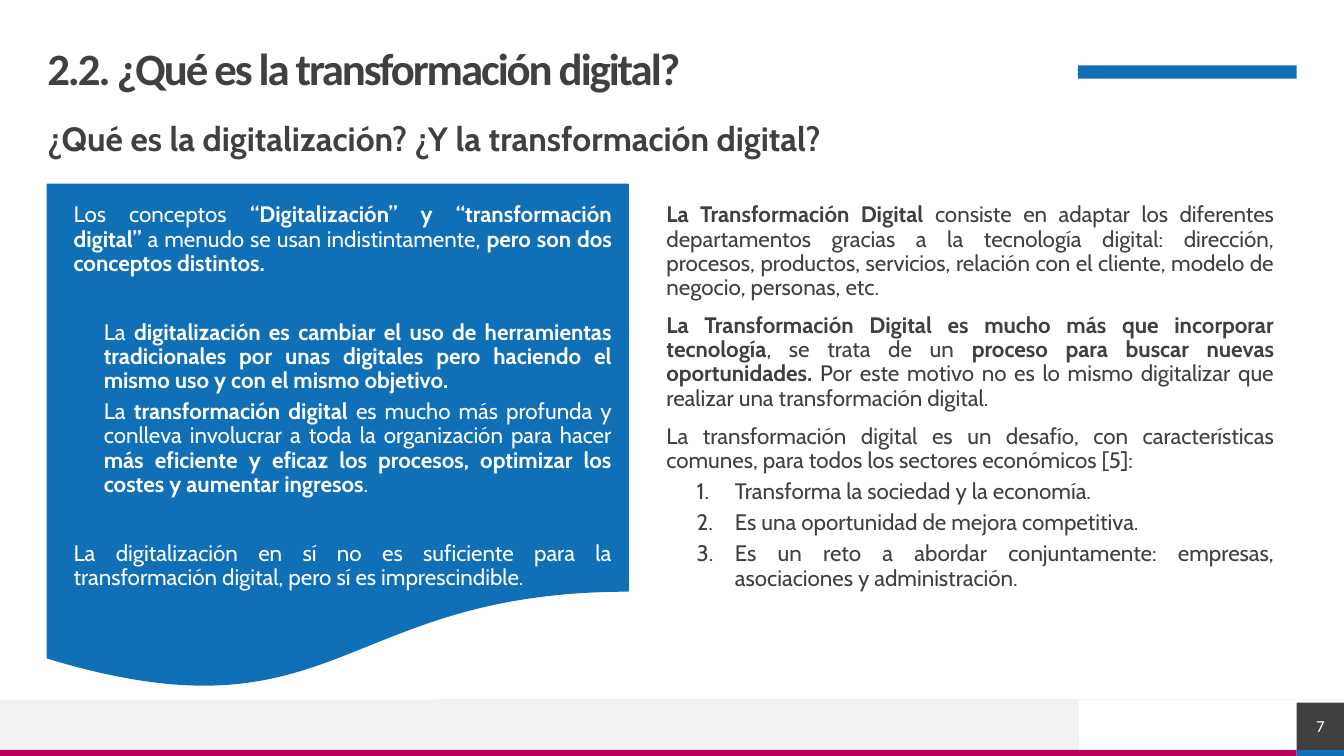
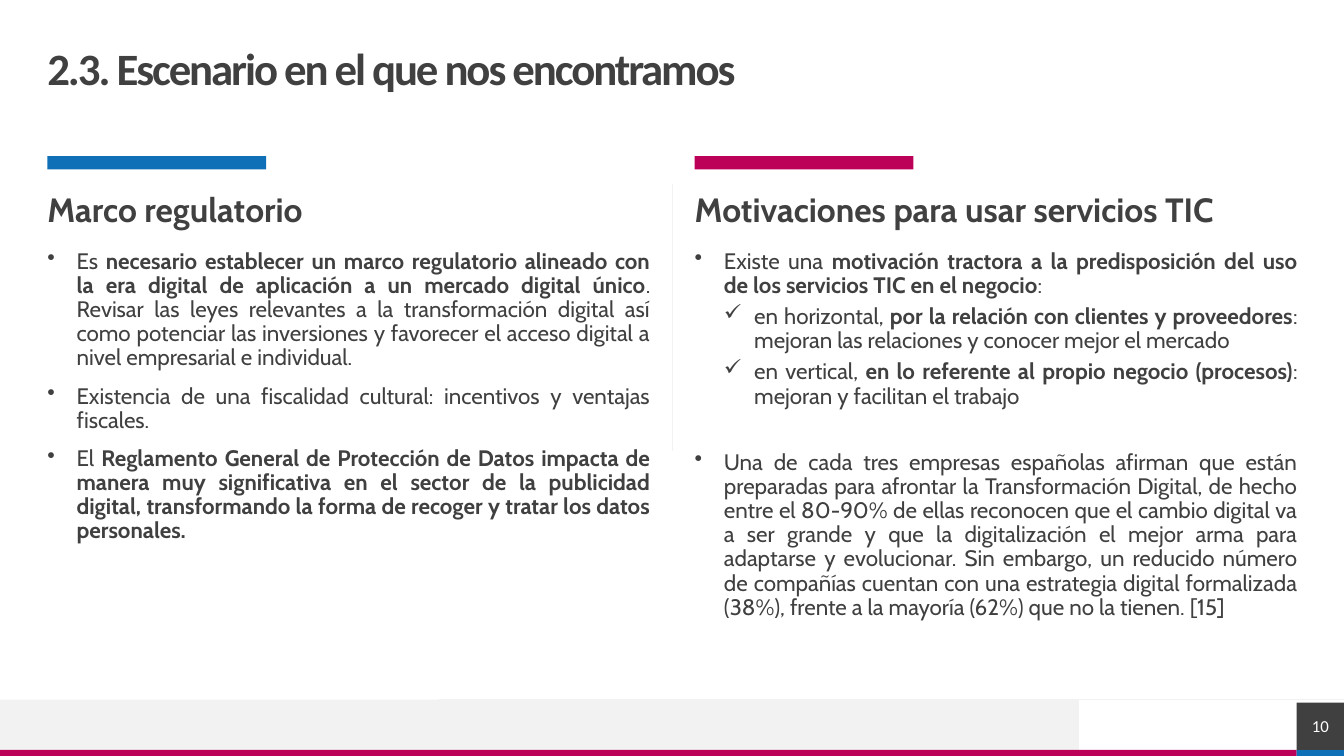
import pptx
import pptx.dml.color
import pptx.enum.shapes
import pptx.enum.text
import pptx.util
import lxml.etree
from pptx.util import Inches

BLUE, PINK, DARK, PALE, WHITE = "0F70B7", "BB0158", "404040", "F2F2F2", "FFFFFF"
HEADING_FONT, BODY_FONT = "Calibri", "Cabin"
SHAPES = pptx.enum.shapes.MSO_SHAPE
ALIGN = pptx.enum.text.PP_ALIGN
ANCHOR = pptx.enum.text.MSO_ANCHOR
DRAWING = "http://schemas.openxmlformats.org/drawingml/2006/main"

LEFT = 0.47
FOOTER_TOP, STRIP_TOP = 6.94, 7.44
CORNER_LEFT, CORNER_SIZE = 12.86, 0.47
ACCENT_WIDTH, ACCENT_HEIGHT = 2.17, 0.13
COLUMN_LEFTS, COLUMN_WIDTH = (LEFT, 6.89), 5.98

# Paragraph styles: left indent and hanging width in inches, space before in points, bullet.
STYLES = {
    "plain": (0, 0, 10, None),
    "inset": (0.3, 0, 5, None),
    "number": (0.68, 0.38, 5, "auto"),
    "bullet": (0.29, 0.29, 10, "•"),
    "check": (0.59, 0.3, 5, "✓"),
}


def color(value):
    return pptx.dml.color.RGBColor.from_string(value)


def add_child(parent, tag, **attributes):
    return lxml.etree.SubElement(parent, f"{{{DRAWING}}}{tag}", attributes)


def add_block(page, left, top, width, height, fill, kind=SHAPES.RECTANGLE, outline=None):
    block = page.shapes.add_shape(kind, Inches(left), Inches(top), Inches(width), Inches(height))
    block.shadow.inherit = False
    block.fill.solid()
    block.fill.fore_color.rgb = color(fill)
    if outline:
        block.line.color.rgb = color(outline)
        block.line.width = pptx.util.Pt(1)
    else:
        block.line.fill.background()
    return block


def add_accent(page, left, top, fill):
    add_block(page, left, top, ACCENT_WIDTH, ACCENT_HEIGHT, fill)


def add_rule(page, x1, y1, x2, y2):
    rule = page.shapes.add_connector(pptx.enum.shapes.MSO_CONNECTOR.STRAIGHT,
                                     Inches(x1), Inches(y1), Inches(x2), Inches(y2))
    rule.line.color.rgb = color(PALE)
    rule.line.width = pptx.util.Pt(0.5)
    add_child(rule._element.spPr, "effectLst")


def prepare_frame(box, anchor=ANCHOR.TOP):
    frame = box.text_frame
    frame.word_wrap = True
    frame.vertical_anchor = anchor
    frame.margin_left = frame.margin_right = frame.margin_top = frame.margin_bottom = 0
    return frame


def add_spans(para, text, size, ink, font=BODY_FONT, bold=False, tracking=None):
    """Write text whose parts between ** marks are bold."""
    for index, part in enumerate(text.split("**")):
        if not part:
            continue
        span = para.add_run()
        span.text = part
        span.font.name = font
        span.font.size = pptx.util.Pt(size)
        span.font.bold = bold or index % 2 == 1
        span.font.color.rgb = color(ink)
        if tracking:
            span.font._element.set("spc", str(round(tracking * 100)))


def add_bullet(para, indent, hanging, bullet):
    settings = para._p.get_or_add_pPr()
    settings.set("marL", str(Inches(indent)))
    settings.set("indent", str(-Inches(hanging)))
    if bullet == "auto":
        add_child(settings, "buAutoNum", type="arabicPeriod")
    elif bullet:
        add_child(settings, "buChar", char=bullet)
    else:
        add_child(settings, "buNone")


def add_text_box(page, left, top, width, height):
    return page.shapes.add_textbox(Inches(left), Inches(top), Inches(width), Inches(height))


def add_line(page, text, left, top, width, height, anchor=ANCHOR.TOP, **format):
    para = prepare_frame(add_text_box(page, left, top, width, height), anchor).paragraphs[0]
    para.line_spacing = 0.9
    add_spans(para, text, ink=DARK, bold=True, **format)


def add_heading(page, text, left, top, width):
    add_line(page, text, left, top, width, 0.39, size=24)


def add_body(page, left, top, width, height, items, ink=DARK):
    """Each item is a style name, a text and, if it differs, the space before."""
    frame = prepare_frame(add_text_box(page, left, top, width, height))
    for index, (style, text, *gap) in enumerate(items):
        para = frame.add_paragraph() if index else frame.paragraphs[0]
        indent, hanging, space, bullet = STYLES[style]
        para.alignment = ALIGN.JUSTIFY
        para.line_spacing = 0.9
        para.space_before = pptx.util.Pt((gap[0] if gap else space) if index else 0)
        add_bullet(para, indent, hanging, bullet)
        add_spans(para, text, 16, ink)


def add_page(deck, title, number):
    page = deck.slides.add_slide(deck.slide_layouts[6])
    add_block(page, 0, FOOTER_TOP, 10.7, STRIP_TOP - FOOTER_TOP, PALE)
    add_block(page, 0, STRIP_TOP, CORNER_LEFT, 0.06, PINK)
    add_block(page, CORNER_LEFT, STRIP_TOP, CORNER_SIZE, 0.06, BLUE)
    add_rule(page, 4.35, FOOTER_TOP, 13.33, FOOTER_TOP)
    corner = add_block(page, CORNER_LEFT, STRIP_TOP - CORNER_SIZE, CORNER_SIZE, CORNER_SIZE, DARK)
    para = prepare_frame(corner, ANCHOR.MIDDLE).paragraphs[0]
    para.alignment = ALIGN.CENTER
    add_spans(para, str(number), 12, WHITE, HEADING_FONT)
    add_line(page, title, LEFT, 0.47, 12.4, 0.47, ANCHOR.MIDDLE,
             size=32, font=HEADING_FONT, tracking=-1.5)
    return page


def build_definition_page(deck):
    page = add_page(deck, "2.2. ¿Qué es la transformación digital?", 7)
    add_accent(page, 10.69, 0.65, BLUE)
    add_heading(page, "¿Qué es la digitalización? ¿Y la transformación digital?", LEFT, 1.21, 9.78)
    add_block(page, LEFT, 1.83, 5.76, 5.03, BLUE, SHAPES.FLOWCHART_DOCUMENT, outline=BLUE)
    add_body(page, 0.73, 2.02, 5.34, 3.9, [
        ("plain", "Los conceptos **“Digitalización” y “transformación digital” **a menudo se usan "
                  "indistintamente, **pero son dos conceptos distintos.**"),
        ("inset", "La **digitalización es cambiar el uso de herramientas tradicionales por unas "
                  "digitales pero haciendo el mismo uso y con el mismo objetivo.**", 32),
        ("inset", "La **transformación digital **es mucho más profunda y conlleva involucrar a toda "
                  "la organización para hacer **más eficiente y eficaz los procesos, optimizar los "
                  "costes y aumentar ingresos**."),
        ("plain", "La digitalización en sí no es suficiente para la transformación digital, pero "
                  "sí es imprescindible.", 32),
    ], WHITE)
    add_body(page, 6.61, 2.02, 6.03, 4.11, [
        ("plain", "**La Transformación Digital **consiste en adaptar los diferentes departamentos "
                  "gracias a la tecnología digital: dirección, procesos, productos, servicios, "
                  "relación con el cliente, modelo de negocio, personas, etc."),
        ("plain", "**La Transformación Digital es mucho más que incorporar tecnología**, se trata de "
                  "un **proceso para buscar nuevas oportunidades. **Por este motivo no es lo mismo "
                  "digitalizar que realizar una transformación digital."),
        ("plain", "La transformación digital es un desafío, con características comunes, para todos "
                  "los sectores económicos [5]:"),
        ("number", "Transforma la sociedad y la economía."),
        ("number", "Es una oportunidad de mejora competitiva."),
        ("number", "Es un reto a abordar conjuntamente: empresas, asociaciones y administración."),
    ])


def build_scenario_page(deck):
    page = add_page(deck, "2.3. Escenario en el que nos encontramos", 10)
    add_rule(page, 6.67, 1.83, 6.67, 4.47)
    regulation = [
        ("bullet", "Es **necesario establecer un marco regulatorio alineado con la era digital de "
                   "aplicación a un mercado digital único**. Revisar las leyes relevantes a la "
                   "transformación digital así como potenciar las inversiones y favorecer el acceso "
                   "digital a nivel empresarial e individual."),
        ("bullet", "Existencia de una fiscalidad cultural: incentivos y ventajas fiscales."),
        ("bullet", "El **Reglamento General de Protección de Datos impacta de manera muy "
                   "significativa en el sector de la publicidad digital, transformando la forma de "
                   "recoger y tratar los datos personales.**"),
    ]
    motivation = [
        ("bullet", "Existe una **motivación tractora a la predisposición del uso de los servicios "
                   "TIC en el negocio**:"),
        ("check", "en horizontal, **por la relación con clientes y proveedores**: mejoran las "
                  "relaciones y conocer mejor el mercado"),
        ("check", "en vertical, **en lo referente al propio negocio (procesos)**: mejoran y "
                  "facilitan el trabajo"),
        ("bullet", "Una de cada tres empresas españolas afirman que están preparadas para afrontar "
                   "la Transformación Digital, de hecho entre el 80-90% de ellas reconocen que el "
                   "cambio digital va a ser grande y que la digitalización el mejor arma para "
                   "adaptarse y evolucionar. Sin embargo, un reducido número de compañías cuentan "
                   "con una estrategia digital formalizada (38%), frente a la mayoría (62%) que no "
                   "la tienen. [15]", 30),
    ]
    columns = [("Marco regulatorio", BLUE, regulation),
               ("Motivaciones para usar servicios TIC", PINK, motivation)]
    for left, (heading, accent, items) in zip(COLUMN_LEFTS, columns):
        add_accent(page, left, 1.55, accent)
        add_heading(page, heading, left, 1.92, COLUMN_WIDTH)
        add_body(page, left, 2.48, COLUMN_WIDTH, 3.8, items)


def main():
    deck = pptx.Presentation()
    deck.slide_width, deck.slide_height = Inches(13.33), Inches(7.5)
    build_definition_page(deck)
    build_scenario_page(deck)
    deck.save("out.pptx")


if __name__ == "__main__":
    main()
